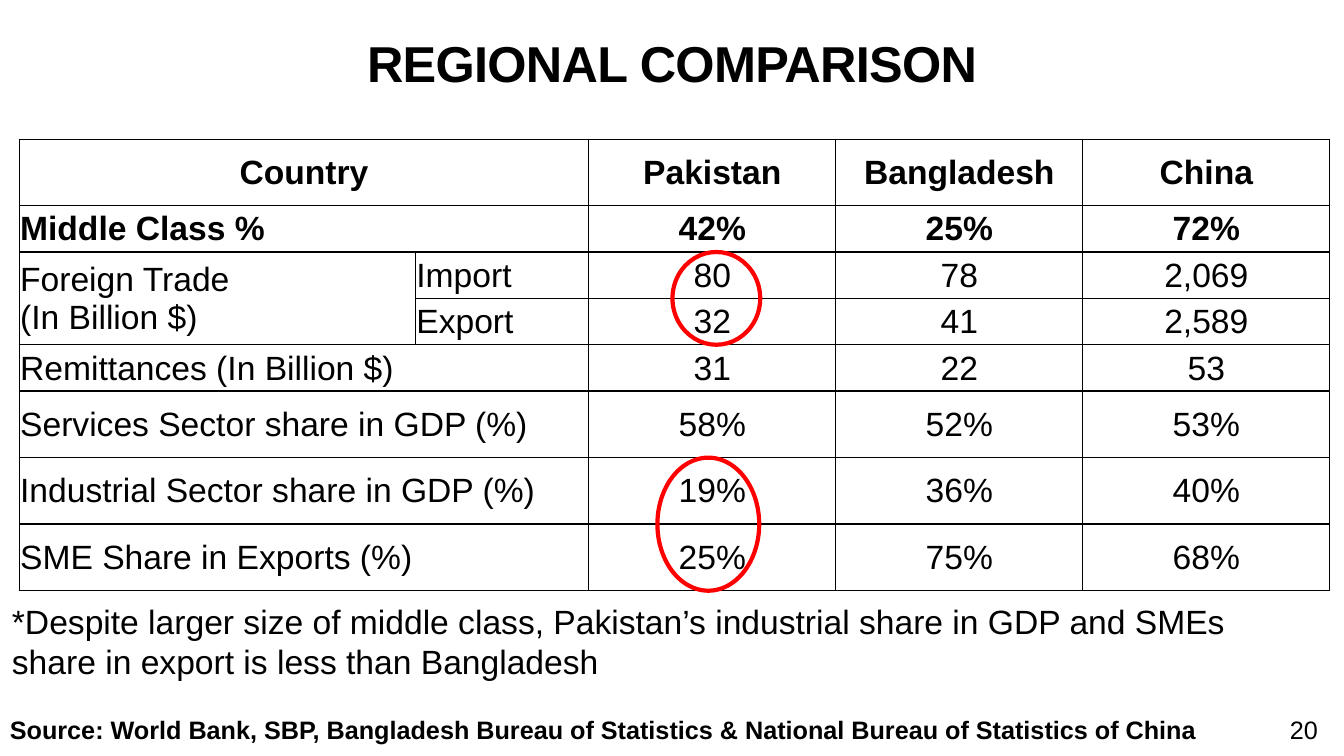
from dataclasses import dataclass

from lxml.etree import SubElement
from pptx import Presentation
from pptx.dml.color import RGBColor
from pptx.enum.shapes import MSO_SHAPE
from pptx.enum.text import MSO_ANCHOR, PP_ALIGN
from pptx.oxml.ns import qn
from pptx.util import Inches, Pt


@dataclass(frozen=True)
class Theme:
    font: str = "Arial"
    ink: RGBColor = RGBColor(0, 0, 0)
    paper: RGBColor = RGBColor(255, 255, 255)
    accent: RGBColor = RGBColor(255, 0, 0)
    title_size: int = 36
    body_size: int = 24
    small_size: int = 18
    border: float = 1
    ring: float = 3


THEME = Theme()
SLIDE_WIDTH, SLIDE_HEIGHT = 13.33, 7.5

COLUMN_WIDTHS = [3.93, 1.72, 2.45, 2.45, 2.45]
TALL, SHORT = 0.66, 0.46
ROW_HEIGHTS = [TALL] + [SHORT] * 4 + [TALL] * 3
PAKISTAN = 2
BOLD_ROWS = 2
COMPARISON = [
    ["Country", "", "Pakistan", "Bangladesh", "China"],
    ["Middle Class %", "", "42%", "25%", "72%"],
    ["Foreign Trade\n(In Billion $)", "Import", "80", "78", "2,069"],
    ["", "Export", "32", "41", "2,589"],
    ["Remittances (In Billion $)", "", "31", "22", "53"],
    ["Services Sector share in GDP (%)", "", "58%", "52%", "53%"],
    ["Industrial Sector share in GDP (%)", "", "19%", "36%", "40%"],
    ["SME Share in Exports (%)", "", "25%", "75%", "68%"],
]
IMPORT_ROW, EXPORT_ROW = 2, 3
# first row, last row, ring width, shift from the column's middle
RINGS = [(IMPORT_ROW, EXPORT_ROW, 0.87, 0.04), (6, 7, 1.01, -0.04)]


def write(frame, text, size, bold=False, align=PP_ALIGN.LEFT, anchor=MSO_ANCHOR.TOP):
    """Fill a text frame, one paragraph per line, and return its runs."""
    frame.word_wrap = True
    frame.vertical_anchor = anchor
    runs = []
    for index, line in enumerate(text.split("\n")):
        paragraph = frame.add_paragraph() if index else frame.paragraphs[0]
        paragraph.alignment = align
        run = paragraph.add_run()
        run.text = line
        run.font.name = THEME.font
        run.font.size = Pt(size)
        run.font.bold = bold
        run.font.color.rgb = THEME.ink
        runs.append(run)
    return runs


def add_text(slide, box, text, size, **style):
    frame = slide.shapes.add_textbox(*map(Inches, box)).text_frame
    return frame, write(frame, text, size, **style)


def add_title(slide, box):
    frame, runs = add_text(slide, box, "REGIONAL COMPARISON", THEME.title_size, bold=True,
                           align=PP_ALIGN.CENTER, anchor=MSO_ANCHOR.MIDDLE)
    frame.paragraphs[0].line_spacing = 0.85
    for run in runs:
        run.font._element.set("spc", "-50")


def outline(cell):
    """Draw all four borders of a cell."""
    properties = cell._tc.get_or_add_tcPr()
    for position, side in enumerate(("a:lnL", "a:lnR", "a:lnT", "a:lnB")):
        line = SubElement(properties, qn(side), w=str(Pt(THEME.border)))
        fill = SubElement(line, qn("a:solidFill"))
        SubElement(fill, qn("a:srgbClr"), val=str(THEME.ink))
        properties.insert(position, line)


def add_comparison(slide, left, top):
    table = slide.shapes.add_table(
        len(ROW_HEIGHTS), len(COLUMN_WIDTHS), Inches(left), Inches(top),
        Inches(sum(COLUMN_WIDTHS)), Inches(sum(ROW_HEIGHTS))).table
    table.first_row = table.horz_banding = False
    for column, width in zip(table.columns, COLUMN_WIDTHS):
        column.width = Inches(width)
    for row, height in zip(table.rows, ROW_HEIGHTS):
        row.height = Inches(height)

    for r, values in enumerate(COMPARISON):
        for c, value in enumerate(values):
            cell = table.cell(r, c)
            cell.margin_left = cell.margin_right = cell.margin_top = Inches(0.01)
            cell.margin_bottom = 0
            cell.fill.solid()
            cell.fill.fore_color.rgb = THEME.paper
            outline(cell)
            if value:
                centred = r == 0 or c >= PAKISTAN
                write(cell.text_frame, value, THEME.body_size, bold=r < BOLD_ROWS,
                      align=PP_ALIGN.CENTER if centred else PP_ALIGN.LEFT)
            cell.vertical_anchor = MSO_ANCHOR.MIDDLE
        if r not in (IMPORT_ROW, EXPORT_ROW):
            table.cell(r, 0).merge(table.cell(r, 1))
    table.cell(IMPORT_ROW, 0).merge(table.cell(EXPORT_ROW, 0))


def add_rings(slide, left, top):
    """Circle pairs of Pakistan's figures in the table at left, top."""
    middle = left + sum(COLUMN_WIDTHS[:PAKISTAN]) + COLUMN_WIDTHS[PAKISTAN] / 2
    for first, last, width, shift in RINGS:
        ring_top = top + sum(ROW_HEIGHTS[:first])
        height = sum(ROW_HEIGHTS[first:last + 1])
        ring = slide.shapes.add_shape(
            MSO_SHAPE.OVAL, Inches(middle + shift - width / 2), Inches(ring_top),
            Inches(width), Inches(height))
        ring.shadow.inherit = False
        ring.fill.background()
        ring.line.color.rgb = THEME.accent
        ring.line.width = Pt(THEME.ring)


def add_footer(slide, top, height):
    add_text(slide, (0, top, 12.54, height),
             "Source: World Bank, SBP, Bangladesh Bureau of Statistics"
             " & National Bureau of Statistics of China", THEME.small_size, bold=True)
    add_text(slide, (11.74, top, 1.43, height), "20", THEME.small_size,
             align=PP_ALIGN.RIGHT, anchor=MSO_ANCHOR.MIDDLE)


def main():
    presentation = Presentation()
    presentation.slide_width = Inches(SLIDE_WIDTH)
    presentation.slide_height = Inches(SLIDE_HEIGHT)
    slide = presentation.slides.add_slide(presentation.slide_layouts[6])

    table_left, table_top = 0.19, 1.38
    add_title(slide, (0, 0, SLIDE_WIDTH, 1.33))
    add_comparison(slide, table_left, table_top)
    add_rings(slide, table_left, table_top)
    add_text(slide, (0.02, 5.91, sum(COLUMN_WIDTHS), 0.91),
             "*Despite larger size of middle class, Pakistan’s industrial share in GDP"
             " and SMEs share in export is less than Bangladesh", THEME.body_size)
    add_footer(slide, 7.04, 0.4)
    presentation.save("out.pptx")


if __name__ == "__main__":
    main()
